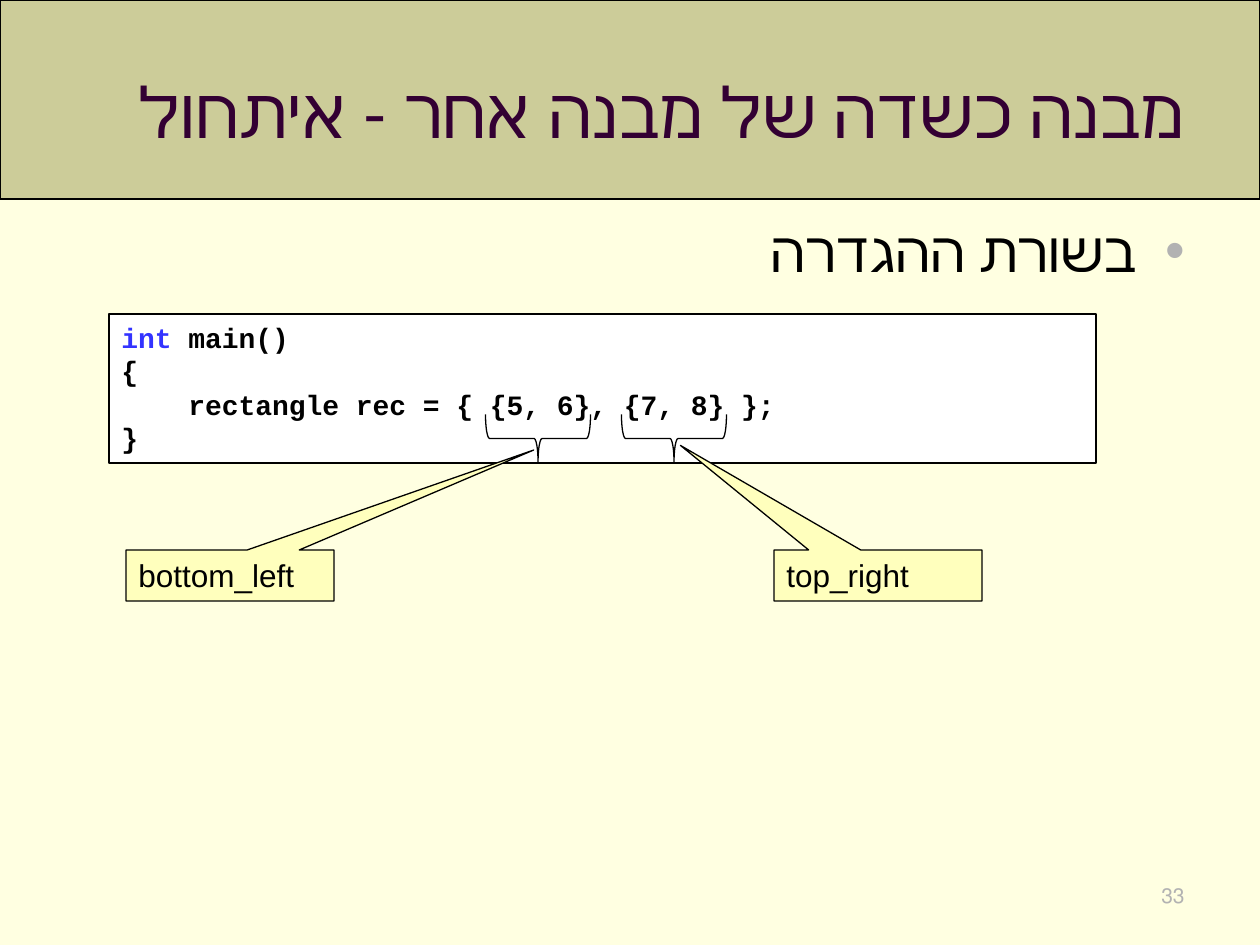
from lxml import etree
from pptx import Presentation
from pptx import util as u
from pptx.dml.color import RGBColor
from pptx.enum import shapes, text
from pptx.oxml.ns import qn

HUES = {
    "page": "FFFFE1", "band": "CCCC99", "title": "330033", "ink": "000000",
    "key": "3333FF", "white": "FFFFFF", "note": "FFFFBD", "gray": "B2B2B2",
}
KINDS = shapes.MSO_SHAPE


def px(*nums):
    return [u.Emu(round(n * 914400 / 126)) for n in nums]


def write(par, words, size, hue="ink", face="Arial", bold=False, rtl=False):
    """Add a run; right-to-left paragraphs are set flush right."""
    run = par.add_run()
    run.text = words
    form = {"size": u.Pt(size), "name": face, "bold": bold}
    for name, value in form.items():
        setattr(run.font, name, value)
    run.font.color.rgb = RGBColor.from_string(HUES[hue])
    if rtl:
        par.alignment = text.PP_ALIGN.RIGHT
        par._p.get_or_add_pPr().set("rtl", "1")


prs = Presentation()
prs.slide_width, prs.slide_height = px(1260, 945)
slide = prs.slides.add_slide(prs.slide_layouts[5])
slide.background.fill.solid()
slide.background.fill.fore_color.rgb = RGBColor.from_string(HUES["page"])
tree = slide.shapes

# Outlined shapes: kind, box, fill
items = {
    "band": (KINDS.RECTANGLE, (0, 0, 1260, 199), "band"),
    "code": (KINDS.RECTANGLE, (109, 314, 987, 149), "white"),
    "brace 1": (KINDS.RIGHT_BRACE, (514, 386, 48, 105), None),
    "brace 2": (KINDS.RIGHT_BRACE, (650, 386, 48, 105), None),
    "bottom_left": (KINDS.RECTANGULAR_CALLOUT, (126, 550, 208, 51), "note"),
    "top_right": (KINDS.RECTANGULAR_CALLOUT, (774, 550, 208, 51), "note"),
}
made = {}
for name, (kind, box, fill) in items.items():
    shape = made[name] = tree.add_shape(kind, *px(*box))
    shape.shadow.inherit = False
    shape.line.color.rgb = RGBColor.from_string(HUES["ink"])
    shape.line.width = u.Pt(0.75)
    if fill:
        shape.fill.solid()
        shape.fill.fore_color.rgb = RGBColor.from_string(HUES[fill])
    else:
        shape.fill.background()
        shape.rotation = 90

# Title, in front of its band
title = tree.title
title.left, title.top, title.width, title.height = px(63, 32, 1134, 157)
title.text_frame.vertical_anchor = text.MSO_ANCHOR.MIDDLE
write(title.text_frame.paragraphs[0], "מבנה כשדה של מבנה אחר - איתחול",
      40, "title", "Times New Roman", rtl=True)
title._element.addprevious(made["band"]._element)

# Bullet line
body = tree.add_textbox(*px(63, 210, 1134, 672)).text_frame
body.word_wrap = True
par = body.paragraphs[0]
par.space_before = u.Pt(6.4)
write(par, "בשורת ההגדרה", 32, rtl=True)
props = par._p.get_or_add_pPr()
props.set("marL", "342900")
props.set("indent", "-342900")
hue = etree.SubElement(props, qn("a:buClr"))
etree.SubElement(hue, qn("a:srgbClr"), val=HUES["gray"])
etree.SubElement(props, qn("a:buFont"), typeface="Arial")
etree.SubElement(props, qn("a:buChar"), char="•")

# Code: indent in px, then runs
lines = [
    (0, [("int ", "key"), ("main()", "ink")]),
    (0, [("{", "ink")]),
    (67, [("rectangle rec = { {5, 6}, {7, 8} };", "ink")]),
    (0, [("}", "ink")]),
]
frame = made["code"].text_frame
frame.vertical_anchor = text.MSO_ANCHOR.TOP
for row, (indent, runs) in enumerate(lines):
    par = frame.add_paragraph() if row else frame.paragraphs[0]
    par.alignment = text.PP_ALIGN.LEFT
    if indent:
        par._p.get_or_add_pPr().set("marL", str(px(indent)[0]))
    for words, hue in runs:
        write(par, words, 16, hue, "Courier New", bold=True)

# Callouts, each pointing at its brace
tips = {"bottom_left": (1.46, -2.46), "top_right": (-0.95, -2.55)}
for name, tip in tips.items():
    note = made[name]
    note.adjustments[0], note.adjustments[1] = tip
    note.text_frame.vertical_anchor = text.MSO_ANCHOR.TOP
    par = note.text_frame.paragraphs[0]
    par.alignment = text.PP_ALIGN.LEFT
    write(par, name, 18)

# Page number
page = tree.add_textbox(*px(903, 876, 294, 50)).text_frame
page.word_wrap = True
write(page.paragraphs[0], "33", 12, "gray", rtl=True)

prs.save("out.pptx")
